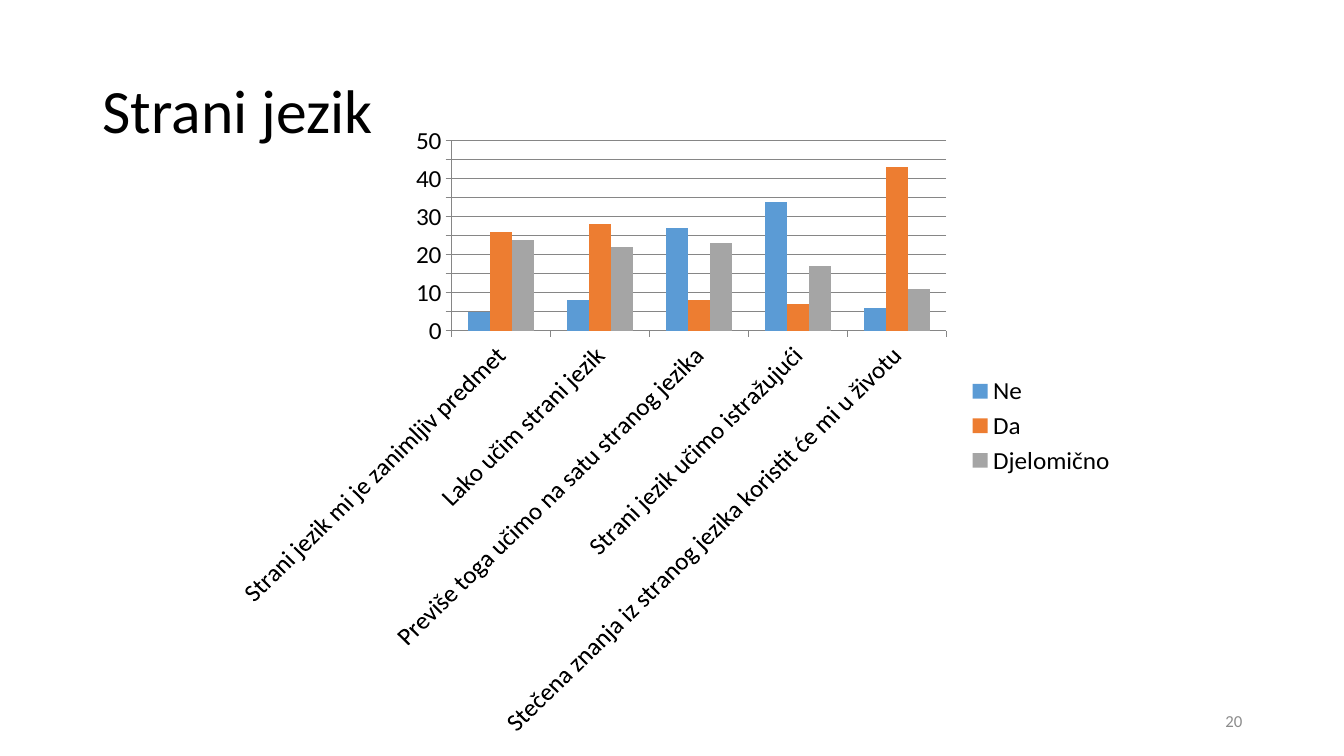
import pptx
import pptx.chart.data
import pptx.dml.color
import pptx.enum.chart
import pptx.enum.text
import pptx.oxml.ns
import pptx.util
from dataclasses import dataclass

EMU_PER_PX = 9144  # 100 px to the inch


@dataclass(frozen=True)
class Theme:
    font: str = "Calibri"
    ink: str = "000000"
    muted: str = "8C8C8C"
    rule: str = "868686"
    title_size: int = 44
    chart_size: int = 18
    number_size: int = 12


THEME = Theme()

CATEGORIES = [
    "Strani jezik mi je zanimljiv predmet",
    "Lako učim strani jezik",
    "Previše toga učimo na satu stranog jezika",
    "Strani jezik učimo istražujući",
    "Stečena znanja iz stranog jezika koristit će mi u životu",
]
ANSWERS = [
    ("Ne", "5B9BD5", (5, 8, 27, 34, 6)),
    ("Da", "ED7D31", (26, 28, 8, 7, 43)),
    ("Djelomično", "A5A5A5", (24, 22, 23, 17, 11)),
]


def px(*lengths):
    return [pptx.util.Emu(length * EMU_PER_PX) for length in lengths]


def rgb(value):
    return pptx.dml.color.RGBColor.from_string(value)


def style_font(font, size, color):
    font.name = THEME.font
    font.size = pptx.util.Pt(size)
    font.color.rgb = rgb(color)


def add_text(page, text, bounds, *, size, color=THEME.ink, align="LEFT", spacing=1.0):
    box = page.shapes.add_textbox(*px(*bounds))
    frame = box.text_frame
    frame.word_wrap = True
    frame.vertical_anchor = pptx.enum.text.MSO_ANCHOR.MIDDLE
    para = frame.paragraphs[0]
    para.alignment = pptx.enum.text.PP_ALIGN[align]
    para.line_spacing = spacing
    span = para.add_run()
    span.text = text
    style_font(span.font, size, color)


def style_line(line):
    line.color.rgb = rgb(THEME.rule)
    line.width = pptx.util.Pt(0.75)


def add_answer_chart(page, bounds):
    data = pptx.chart.data.CategoryChartData()
    data.categories = CATEGORIES
    for name, _, values in ANSWERS:
        data.add_series(name, values)
    kind = pptx.enum.chart.XL_CHART_TYPE.COLUMN_CLUSTERED
    chart = page.shapes.add_chart(kind, *px(*bounds), data).chart
    chart.has_title = False
    style_font(chart.font, THEME.chart_size, THEME.ink)

    # Columns
    plot = chart.plots[0]
    plot.vary_by_categories = False
    plot.gap_width = 150
    plot.overlap = 0
    for series, (_, color, _) in zip(plot.series, ANSWERS):
        series.format.fill.solid()
        series.format.fill.fore_color.rgb = rgb(color)

    # Axes
    for axis in (chart.category_axis, chart.value_axis):
        axis.major_tick_mark = pptx.enum.chart.XL_TICK_MARK.OUTSIDE
        style_line(axis.format.line)
        style_font(axis.tick_labels.font, THEME.chart_size, THEME.ink)
    scale = chart.value_axis
    scale.minimum_scale, scale.maximum_scale, scale.major_unit = 0, 50, 5
    scale.has_major_gridlines = True
    style_line(scale.major_gridlines.format.line)

    # Slanted category labels; the plot shrinks by itself to fit them
    label_body = chart.category_axis._element.find(
        pptx.oxml.ns.qn("c:txPr")).find(pptx.oxml.ns.qn("a:bodyPr"))
    label_body.set("rot", "-2700000")
    label_body.set("vert", "horz")

    # Legend
    chart.has_legend = True
    chart.legend.position = pptx.enum.chart.XL_LEGEND_POSITION.RIGHT
    chart.legend.include_in_layout = False
    style_font(chart.legend.font, THEME.chart_size, THEME.ink)


def main():
    deck = pptx.Presentation()
    deck.slide_width, deck.slide_height = px(1333, 750)
    page = deck.slides.add_slide(deck.slide_layouts[6])

    # Title, chart and page number
    add_text(page, "Strani jezik", (92, 40, 1150, 145),
             size=THEME.title_size, spacing=0.9)
    add_answer_chart(page, (217, 125, 900, 606))
    add_text(page, "20", (942, 695, 300, 40),
             size=THEME.number_size, color=THEME.muted, align="RIGHT")

    deck.save("out.pptx")


if __name__ == "__main__":
    main()
